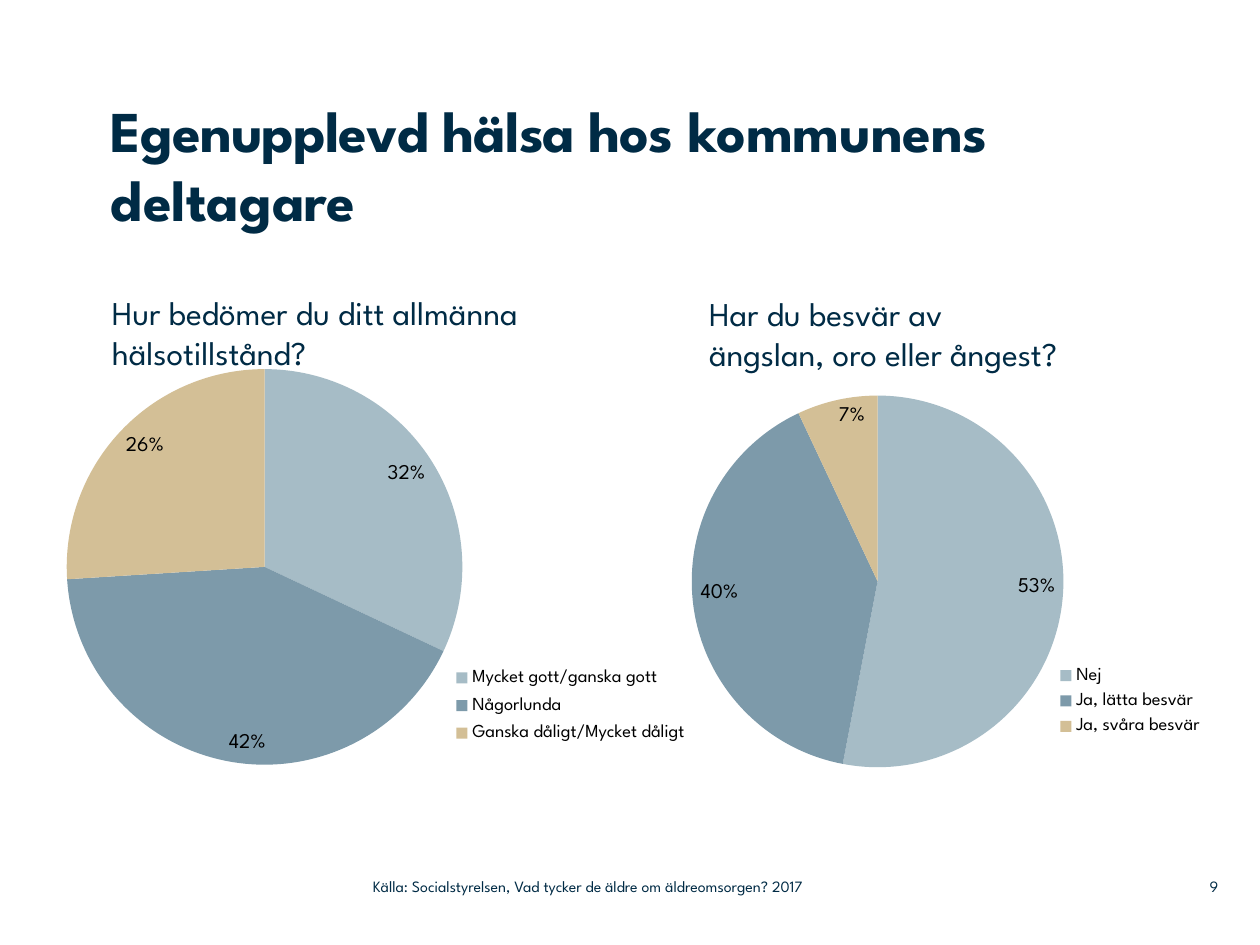
from pptx import Presentation, util as u
from pptx.chart.data import CategoryChartData
from pptx.dml.color import RGBColor
from pptx.enum import chart as charts, text
from pptx.oxml import parse_xml
from pptx.oxml.ns import nsdecls

FONT = "League Spartan"
NAVY, BLACK = "002B45", "000000"
SLICES = ["A6BCC6", "7D9AAA", "D3BF96"]
WIDTH, HEIGHT = 10, 7.5
FOOT_TOP, FOOT_HEIGHT = 6.89, 0.29
CHART_SIZE = (5.42, 3.42)


def colour(value):
    return RGBColor.from_string(value)


def style(font, size, fill=NAVY, bold=False):
    font.name, font.size, font.bold = FONT, u.Pt(size), bold
    font.color.rgb = colour(fill)


def place(item, box):
    item.left, item.top, item.width, item.height = map(u.Inches, box)


def write(item, content, size, bold=False, inset=True,
          align=text.PP_ALIGN.LEFT, anchor=text.MSO_ANCHOR.TOP):
    """Fill a shape with one paragraph; content is a string or (string, spacing) spans."""
    frame = item.text_frame
    frame.word_wrap = True
    frame.auto_size = text.MSO_AUTO_SIZE.NONE
    frame.vertical_anchor = anchor
    if not inset:
        frame.margin_left = frame.margin_right = 0
        frame.margin_top = frame.margin_bottom = 0
    para = frame.paragraphs[0]
    if isinstance(content, str):
        para.text = content
    else:
        for words, spacing in content:
            span = para.add_run()
            span.text = words
            span.font._element.set("spc", str(spacing))
    para.alignment = align
    for span in para.runs:
        style(span.font, size, bold=bold)


def add_text(page, box, content, size, **options):
    write(page.shapes.add_textbox(*map(u.Inches, box)), content, size, **options)


def set_layout(parent, before, box, frame, inner=False):
    """Fix a chart part at a slide position, as shares of the chart frame."""
    left, top, width, height = frame
    shares = {
        "x": (box[0] - left) / width, "y": (box[1] - top) / height,
        "w": box[2] / width, "h": box[3] / height,
    }
    target = '<c:layoutTarget val="inner"/>' if inner else ""
    modes = "".join(f'<c:{key}Mode val="edge"/>' for key in "xy")
    values = "".join(f'<c:{key} val="{share:.4f}"/>' for key, share in shares.items())
    layout = parse_xml(f"<c:layout {nsdecls('c')}><c:manualLayout>{target}{modes}{values}"
                       "</c:manualLayout></c:layout>")
    for old in parent.findall(layout.tag):
        parent.remove(old)
    parent.find(f"{{{layout.nsmap['c']}}}{before}").addprevious(layout)


def add_pie(page, origin, answers, pie, legend_box):
    """Pie in a frame at origin; pie is (left, top, diameter) on the slide."""
    frame = (*origin, *CHART_SIZE)
    data = CategoryChartData()
    data.categories = list(answers)
    data.add_series("Series 1", list(answers.values()))
    chart = page.shapes.add_chart(
        charts.XL_CHART_TYPE.PIE, *map(u.Inches, frame), data).chart
    style(chart.font, 10, BLACK)
    chart.has_title = False

    # Slices and percentages
    plot = chart.plots[0]
    plot.vary_by_categories = True
    for index, fill in enumerate(SLICES):
        point = plot.series[0].points[index].format
        point.fill.solid()
        point.fill.fore_color.rgb = colour(fill)
        point.line.fill.background()
    plot.has_data_labels = True
    labels = plot.data_labels
    labels.show_percentage, labels.show_value = True, False
    labels.number_format, labels.number_format_is_linked = "0%", False
    labels.position = charts.XL_LABEL_POSITION.INSIDE_END
    style(labels.font, 12, BLACK)

    # Legend
    chart.has_legend = True
    legend = chart.legend
    legend.position = charts.XL_LEGEND_POSITION.RIGHT
    legend.include_in_layout = True
    style(legend.font, 10.5, BLACK)

    left, top, diameter = pie
    plot_area = plot._element.getparent()
    set_layout(plot_area, "pieChart", (left, top, diameter, diameter), frame, inner=True)
    set_layout(legend._element, "overlay", legend_box, frame)


def add_title(page, box):
    place(page.shapes.title, box)
    write(page.shapes.title,
          [("Egenupplevd hälsa hos ", -50), ("kommunens deltagare", 0)],
          33, bold=True, inset=False)


def add_footer(page):
    options = dict(inset=False, anchor=text.MSO_ANCHOR.MIDDLE)
    add_text(page, (WIDTH * 0.92, FOOT_TOP, 0.47, FOOT_HEIGHT), "9", 9,
             align=text.PP_ALIGN.RIGHT, **options)
    add_text(page, (2.96, FOOT_TOP, 4.43, FOOT_HEIGHT),
             "Källa: Socialstyrelsen, Vad tycker de äldre om äldreomsorgen? 2017",
             9, **options)


def main():
    deck = Presentation()
    deck.slide_width, deck.slide_height = u.Inches(WIDTH), u.Inches(HEIGHT)
    page = deck.slides.add_slide(deck.slide_layouts[5])
    add_title(page, (0.88, 0.75, 8.27, 1.42))

    # Questions
    add_text(page, (0.79, 2.27, 4.07, 0.74),
             "Hur bedömer du ditt allmänna hälsotillstånd?", 19)
    add_text(page, (5.53, 2.28, 3.71, 0.74),
             "Har du besvär av \vängslan, oro eller ångest?", 19)

    # Answers
    add_pie(page, (0.39, 2.79),
            {"Mycket gott/ganska gott": 32, "Någorlunda": 42,
             "Ganska dåligt/Mycket dåligt": 26},
            pie=(0.53, 2.93, 3.14), legend_box=(3.48, 5.23, 2.1, 0.74))
    add_pie(page, (4.9, 2.81),
            {"Nej": 53, "Ja, lätta besvär": 40, "Ja, svåra besvär": 7},
            pie=(5.49, 3.14, 2.95), legend_box=(8.27, 5.23, 1.4, 0.67))

    add_footer(page)
    deck.save("out.pptx")


if __name__ == "__main__":
    main()
